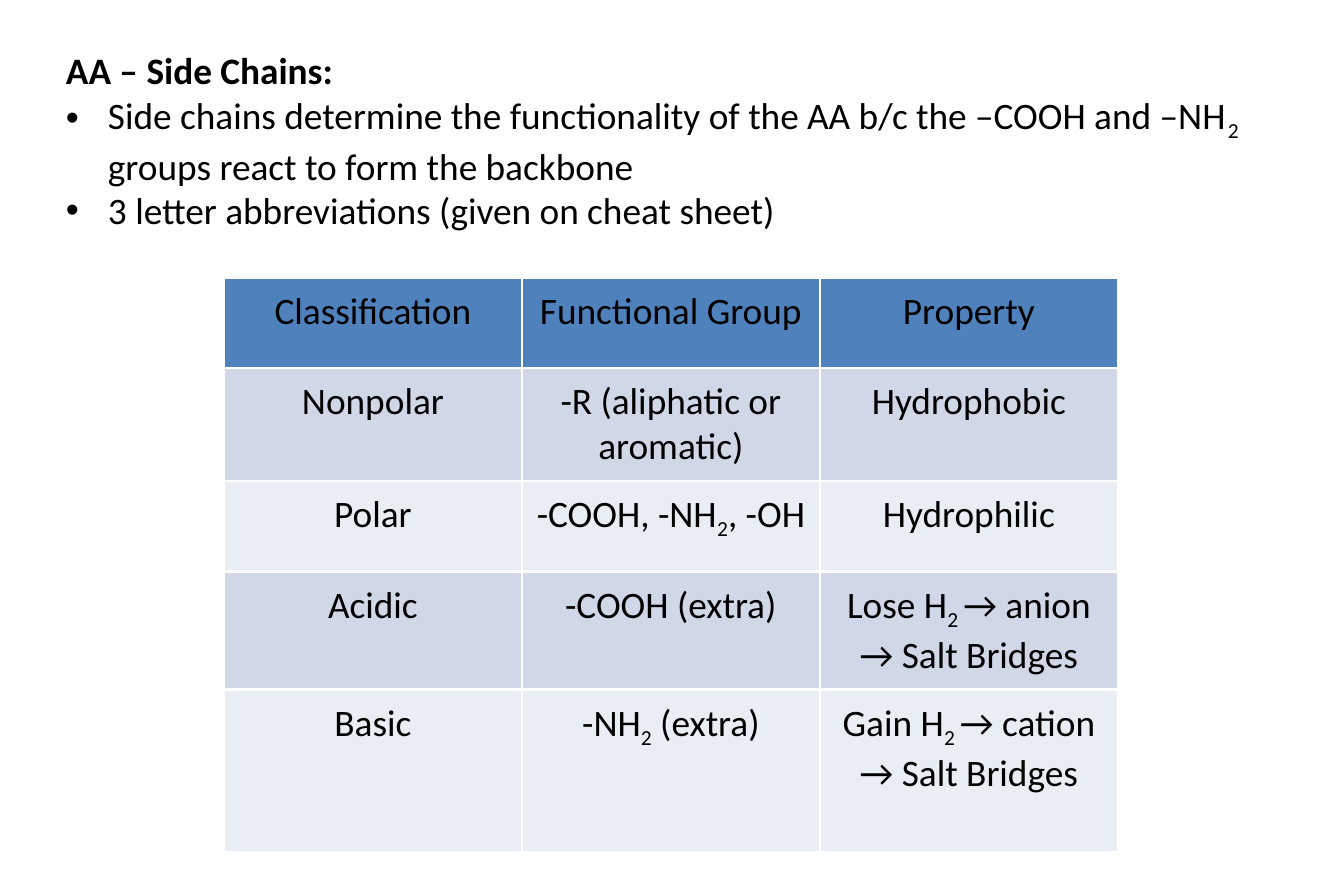
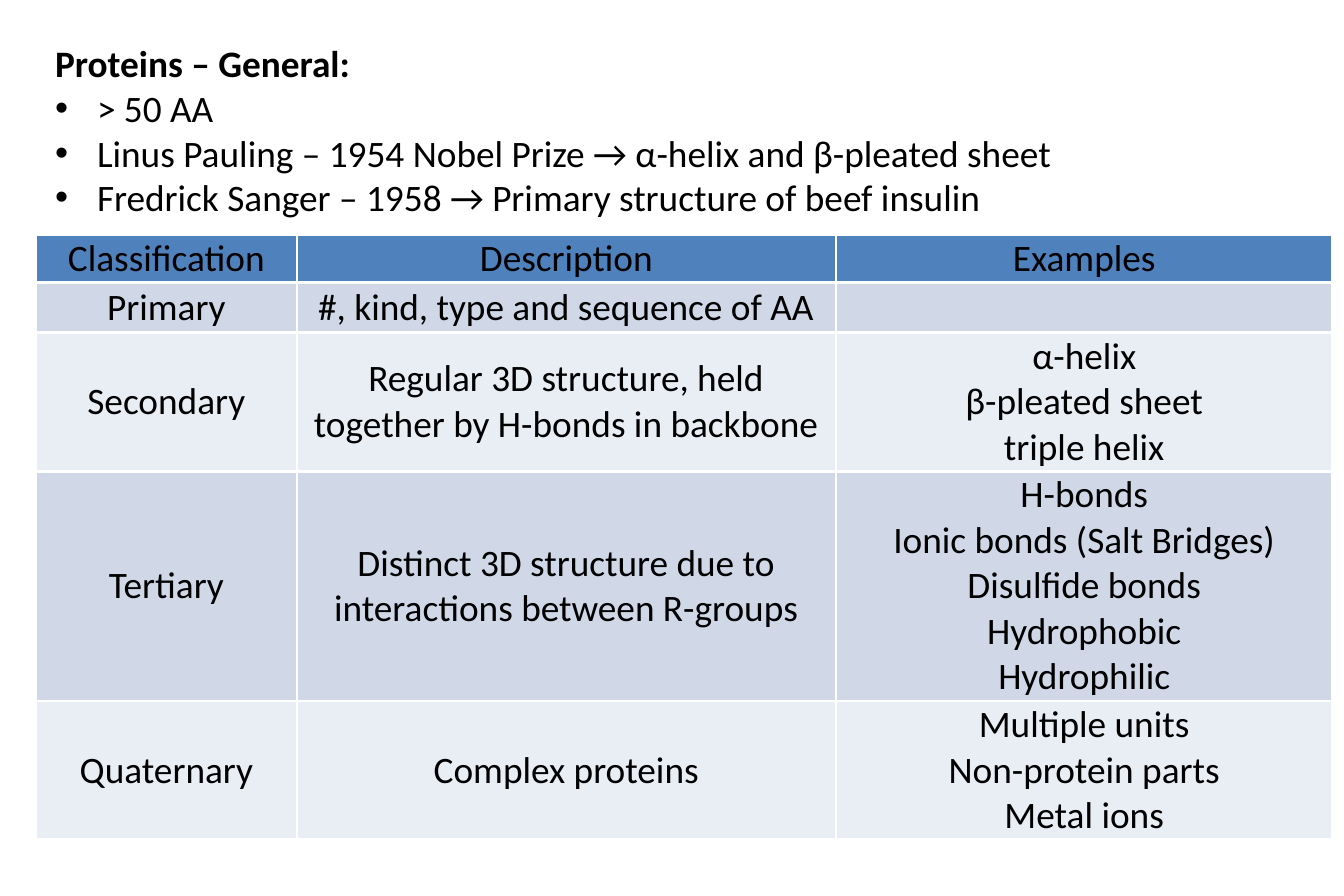
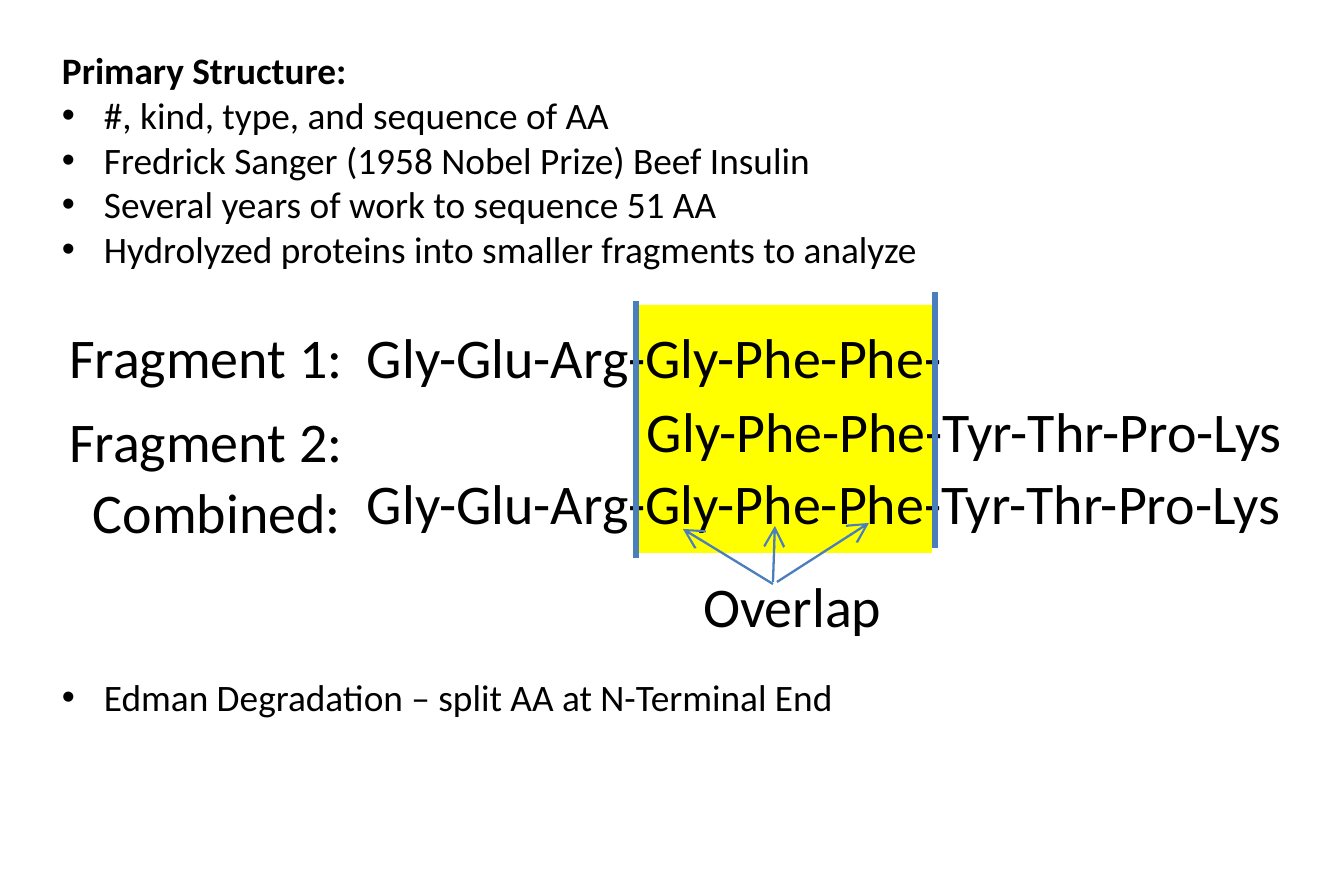
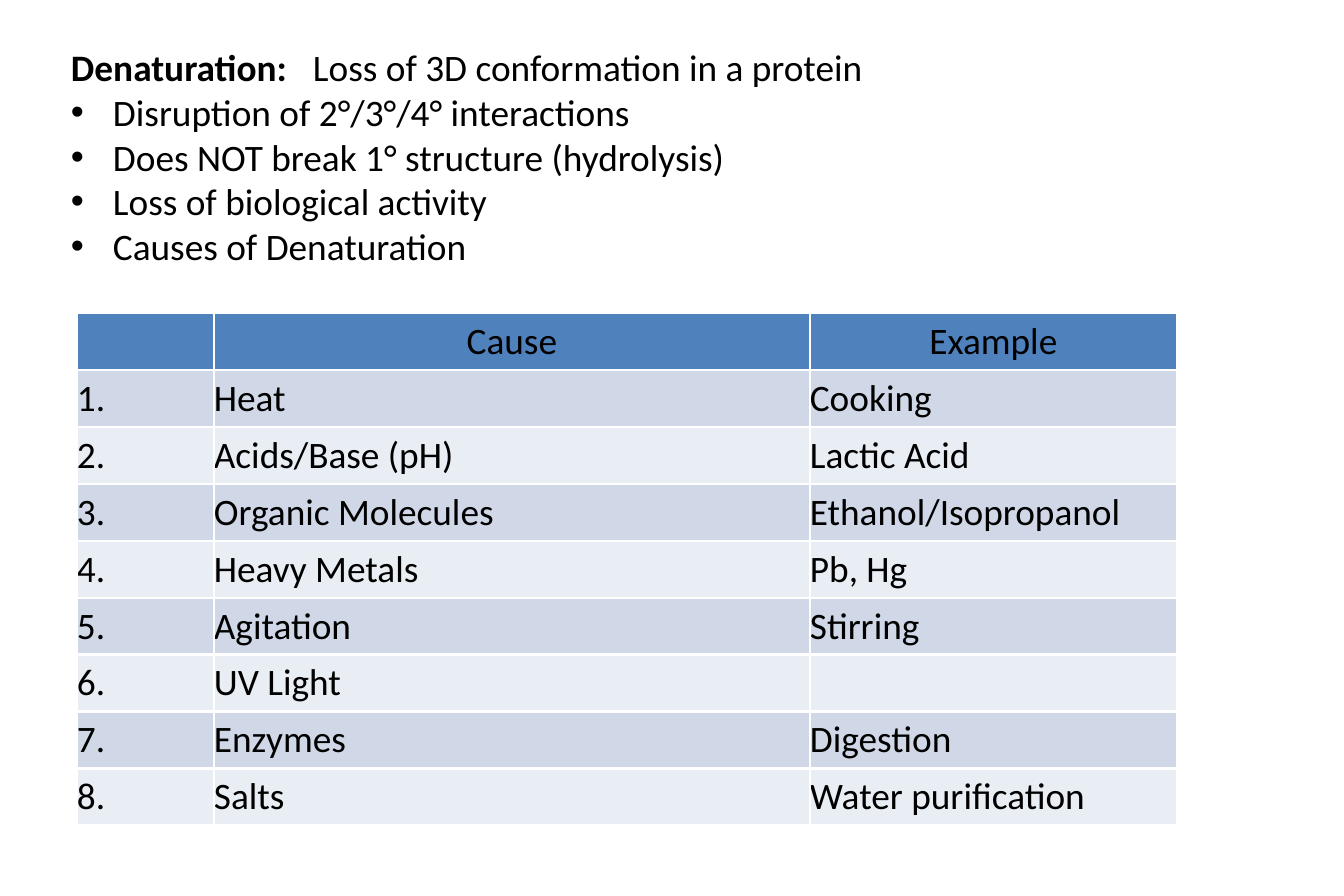
"""Builds four study slides on amino acids and proteins."""
from pptx import Presentation
from pptx.dml.color import RGBColor
from pptx.enum.shapes import MSO_CONNECTOR as Connector, MSO_SHAPE as Shape
from pptx.enum.text import MSO_ANCHOR as Anchor, MSO_AUTO_SIZE as AutoSize, PP_ALIGN as Align
from pptx.oxml.ns import qn
from pptx.util import Emu, Pt
from lxml.etree import SubElement

PX = 914400 / 224
FONT = "Calibri"
BLACK = RGBColor(0x00, 0x00, 0x00)
HEADER = RGBColor(0x4F, 0x81, 0xBD)
BANDS = [RGBColor(0xE9, 0xED, 0xF4), RGBColor(0xD0, 0xD8, 0xE8)]
YELLOW = RGBColor(0xFF, 0xFF, 0x00)
BLUE = RGBColor(0x4B, 0x7E, 0xBC)
LINE_HEIGHT = 45
INDENT = 42


def px(*lengths):
    """Turns pixel lengths into EMU."""
    return [Emu(round(length * PX)) for length in lengths]


def write(para, text, size=12, bold=False):
    """Adds runs to a paragraph; text between tildes is subscript."""
    for index, piece in enumerate(text.split("~")):
        if piece:
            span = para.add_run()
            span.text = piece
            span.font.name = FONT
            span.font.size = Pt(size)
            span.font.bold = bold
            span.font.color.rgb = BLACK
            if index % 2:
                span.font._element.set("baseline", "-25000")
    if not text:
        para._p.get_or_add_endParaRPr().set("sz", str(size * 100))


PAGES = [
    {
        "at": (66, 47),
        "title": "AA – Side Chains:",
        "bullets": [
            "Side chains determine the functionality of the AA b/c the –COOH and –NH~2~ "
            "groups react to form the backbone",
            "3 letter abbreviations (given on cheat sheet)",
        ],
        "table": {
            "at": (224, 278),
            "widths": [298, 298, 298],
            "heights": [90, 112, 91, 117, 163],
            "margins": (11, 11),
            "anchor": Anchor.TOP,
            "align": Align.CENTER,
            "rows": [
                ["Classification", "Functional Group", "Property"],
                ["Nonpolar", "-R (aliphatic or aromatic)", "Hydrophobic"],
                ["Polar", "-COOH, -NH~2~, -OH", "Hydrophilic"],
                ["Acidic", "-COOH (extra)", "Lose H~2 ~→ anion → Salt Bridges"],
                ["Basic", "-NH~2~ (extra)", "Gain H~2 ~→ cation → Salt Bridges"],
            ],
        },
    },
    {
        "at": (55, 40),
        "title": "Proteins – General:",
        "bullets": [
            "> 50 AA",
            "Linus Pauling – 1954 Nobel Prize → α-helix and β-pleated sheet",
            "Fredrick Sanger – 1958 → Primary structure of beef insulin",
        ],
        "table": {
            "at": (36, 235),
            "widths": [261, 539, 497],
            "heights": [47, 50, 139, 228, 138],
            "margins": (11, 1),
            "anchor": Anchor.MIDDLE,
            "align": Align.CENTER,
            "rows": [
                ["Classification", "Description", "Examples"],
                ["Primary", "#, kind, type and sequence of AA", ""],
                ["Secondary", "Regular 3D structure, held together by H-bonds in backbone",
                 "α-helix\nβ-pleated sheet\ntriple helix"],
                ["Tertiary", "Distinct 3D structure due to interactions between R-groups",
                 "H-bonds\nIonic bonds (Salt Bridges)\nDisulfide bonds\nHydrophobic\nHydrophilic"],
                ["Quaternary", "Complex proteins",
                 "Multiple units\nNon-protein parts\nMetal ions"],
            ],
        },
    },
    {
        "at": (62, 47),
        "title": "Primary Structure:",
        "bullets": [
            "#, kind, type, and sequence of AA",
            "Fredrick Sanger (1958 Nobel Prize) Beef Insulin",
            "Several years of work to sequence 51 AA",
            "Hydrolyzed proteins into smaller fragments to analyze",
            "Edman Degradation – split AA at N-Terminal End",
        ],
    },
    {
        "at": (71, 44),
        "title": "Denaturation:",
        "subtitle": "Loss of 3D conformation in a protein",
        "bullets": [
            "Disruption of 2°/3°/4° interactions",
            "Does NOT break 1° structure (hydrolysis)",
            "Loss of biological activity",
            "Causes of Denaturation",
        ],
        "table": {
            "at": (77, 313),
            "widths": [137, 596, 367],
            "heights": [57] * 9,
            "margins": (0, 0),
            "anchor": Anchor.MIDDLE,
            "align": Align.LEFT,
            "rows": [
                ["", "Cause", "Example"],
                ["1.", "Heat", "Cooking"],
                ["2.", "Acids/Base (pH)", "Lactic Acid"],
                ["3.", "Organic Molecules", "Ethanol/Isopropanol"],
                ["4.", "Heavy Metals", "Pb, Hg"],
                ["5.", "Agitation", "Stirring"],
                ["6.", "UV Light", ""],
                ["7.", "Enzymes", "Digestion"],
                ["8.", "Salts", "Water purification"],
            ],
        },
    },
]

deck = Presentation()
deck.slide_width, deck.slide_height = px(1344, 896)

for content in PAGES:
    page = deck.slides.add_slide(deck.slide_layouts[1])
    left, top = content["at"]
    title, body = page.placeholders
    heights = (LINE_HEIGHT, LINE_HEIGHT * 4)
    for box, box_top, height in zip((title, body), (top, top + LINE_HEIGHT), heights):
        box.left, box.top, box.width, box.height = px(left, box_top, 1290 - left, height)
        frame = box.text_frame
        frame.auto_size = AutoSize.NONE
        frame.word_wrap = True
        frame.vertical_anchor = Anchor.TOP
        frame.margin_left = frame.margin_right = frame.margin_top = frame.margin_bottom = 0

    para = title.text_frame.paragraphs[0]
    para.alignment = Align.LEFT
    write(para, content["title"], bold=True)
    if "subtitle" in content:
        tabs = SubElement(para._p.get_or_add_pPr(), qn("a:tabLst"))
        SubElement(tabs, qn("a:tab"), pos=str(px(242)[0]), algn="l")
        write(para, "\t" + content["subtitle"])

    for index, text in enumerate(content["bullets"]):
        frame = body.text_frame
        para = frame.add_paragraph() if index else frame.paragraphs[0]
        para.space_before = Pt(0)
        hanging = px(INDENT)[0]
        para._p.get_or_add_pPr().set("marL", str(hanging))
        para._p.get_or_add_pPr().set("indent", str(-hanging))
        write(para, text)

    if "table" in content:
        grid = content["table"]
        rows, widths = grid["rows"], grid["widths"]
        table = page.shapes.add_table(
            len(rows), len(widths),
            *px(*grid["at"], sum(widths), sum(grid["heights"]))).table
        for column, width in zip(table.columns, px(*widths)):
            column.width = width
        for row, height in zip(table.rows, px(*grid["heights"])):
            row.height = height
        side, edge = px(*grid["margins"])
        for row_index, texts in enumerate(rows):
            for column_index, text in enumerate(texts):
                cell = table.cell(row_index, column_index)
                cell.fill.solid()
                cell.fill.fore_color.rgb = BANDS[row_index % 2] if row_index else HEADER
                cell.margin_left = cell.margin_right = side
                cell.margin_top = cell.margin_bottom = edge
                cell.vertical_anchor = grid["anchor"]
                for index, line in enumerate(text.split("\n")):
                    frame = cell.text_frame
                    para = frame.add_paragraph() if index else frame.paragraphs[0]
                    para.alignment = grid["align"] if row_index else Align.CENTER
                    write(para, line)

page = deck.slides[2]
body = page.placeholders[1]
body.height = px(640)[0]
body.text_frame.paragraphs[-1].space_before = Pt(129.5)

overlap = page.shapes.add_shape(Shape.RECTANGLE, *px(636, 305, 296, 248))
overlap.shadow.inherit = False
overlap.fill.solid()
overlap.fill.fore_color.rgb = YELLOW
overlap.line.fill.background()

for text, left, top, width in [
    ("Gly-Glu-Arg-Gly-Phe-Phe-Tyr-Thr-Pro-Lys", 345, 457, 974),
    ("Gly-Phe-Phe-Tyr-Thr-Pro-Lys", 625, 385, 690),
    ("Gly-Glu-Arg-Gly-Phe-Phe-", 345, 311, 629),
    ("Fragment 1:", 47, 311, 323),
    ("Combined:", 71, 466, 296),
    ("Fragment 2:", 47, 396, 323),
    ("Overlap", 681, 560, 226),
]:
    box = page.shapes.add_textbox(*px(left, top, width, 90))
    box.text_frame.word_wrap = True
    write(box.text_frame.paragraphs[0], text, size=18)

for ends, weight, has_arrow in [
    ((636, 301, 636, 558), 2, False),
    ((935, 292, 935, 548), 2, False),
    ((773, 584, 683, 529), 0.75, True),
    ((773, 582, 775, 526), 0.75, True),
    ((777, 582, 869, 523), 0.75, True),
]:
    line = page.shapes.add_connector(Connector.STRAIGHT, *px(*ends))
    line.line.color.rgb = BLUE
    line.line.width = Pt(weight)
    if has_arrow:
        SubElement(line.line._get_or_add_ln(), qn("a:tailEnd"), type="arrow")
    SubElement(line._element.spPr, qn("a:effectLst"))

deck.save("out.pptx")
